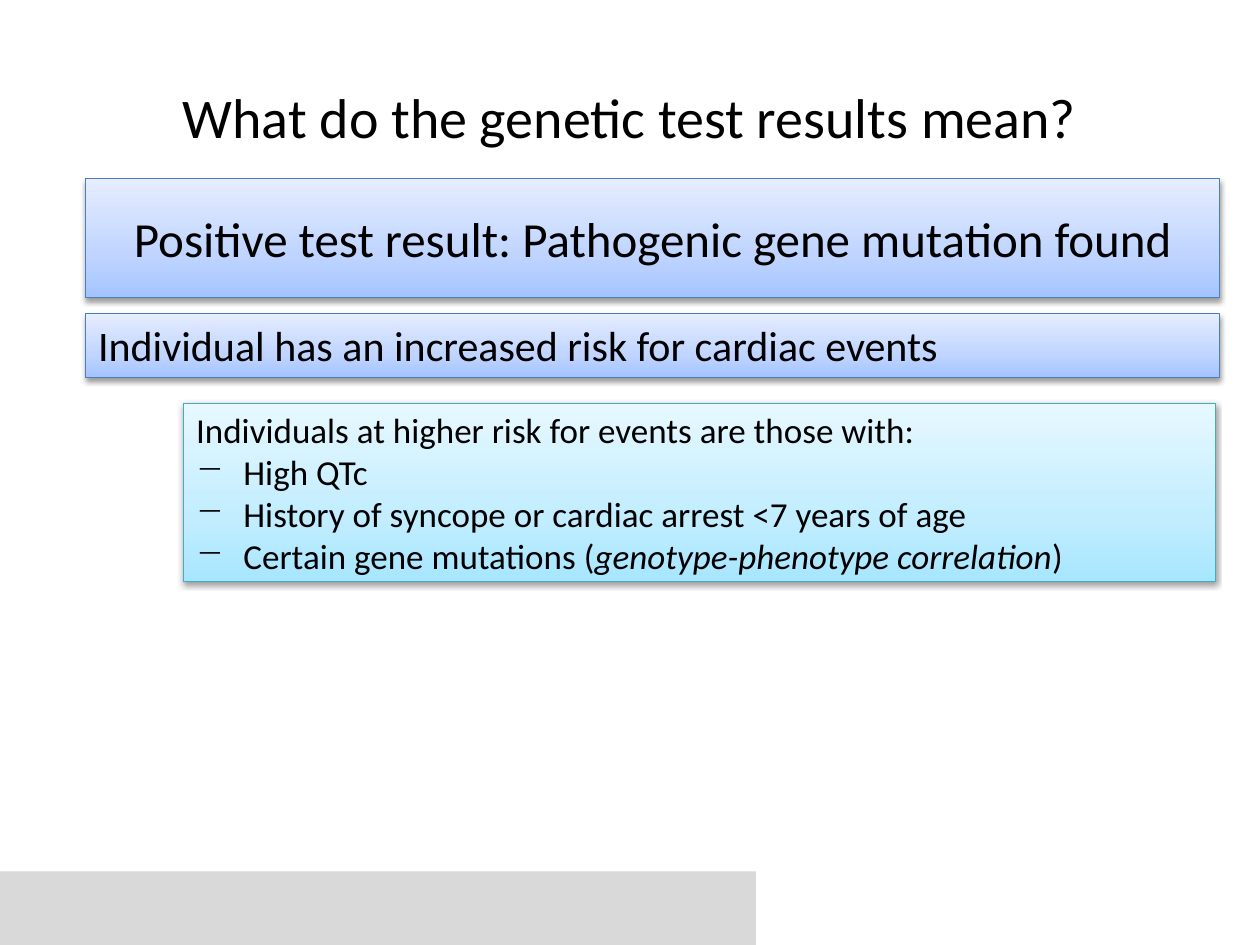
from copy import deepcopy

from lxml import etree
from pptx import Presentation
from pptx.dml.color import RGBColor
from pptx.enum import shapes, text
from pptx.oxml import ns
from pptx.util import Pt

COLORS = {"text": "000000", "footer": "D9D9D9", "shadow": "000000"}
# Gradient stops run from the bottom of a box to its top
BLUE = {"line": "4B7EBC", "stops": [(0, "A4C4FF"), (35, "BFD4FF"), (100, "E6EEFF")]}
CYAN = {"line": "46AAC5", "stops": [(0, "A7E6FF"), (35, "C1EDFF"), (100, "E7F8FF")]}

LEFT, CENTER = text.PP_ALIGN.LEFT, text.PP_ALIGN.CENTER
TOP, MIDDLE = text.MSO_ANCHOR.TOP, text.MSO_ANCHOR.MIDDLE
INDENT = 27

RISK_FACTORS = [
    [("High QTc", False)],
    [("History of syncope or cardiac arrest <7 years of age", False)],
    [("Certain gene mutations (", False),
     ("genotype-phenotype correlation", True), (")", False)],
]


def add_child(parent, tag, **attributes):
    return etree.SubElement(parent, ns.qn(tag), attributes)


def write_paragraph(paragraph, runs, size, align=LEFT, bullet=None):
    paragraph.alignment = align
    if bullet:
        properties = paragraph._p.get_or_add_pPr()
        properties.set("marL", str(Pt(INDENT)))
        properties.set("indent", str(Pt(-INDENT)))
        add_child(properties, "a:buChar", char=bullet)
    for wording, italic in runs:
        run = paragraph.add_run()
        run.text = wording
        formats = {"name": "Calibri", "size": Pt(size), "italic": italic}
        for name, value in formats.items():
            setattr(run.font, name, value)
        run.font.color.rgb = RGBColor.from_string(COLORS["text"])


def write_line(shape, wording, size, align=LEFT, anchor=MIDDLE):
    frame = shape.text_frame
    frame.word_wrap = True
    frame.vertical_anchor = anchor
    write_paragraph(frame.paragraphs[0], [(wording, False)], size, align)
    return frame


def add_rectangle(slide, box):
    shape = slide.shapes.add_shape(shapes.MSO_SHAPE.RECTANGLE, *map(Pt, box))
    shape.shadow.inherit = False
    return shape


def add_footer_band(slide, box):
    shape = add_rectangle(slide, box)
    shape.fill.solid()
    shape.fill.fore_color.rgb = RGBColor.from_string(COLORS["footer"])
    shape.line.fill.background()


def add_shadow(shape):
    effects = shape._element.spPr.find(ns.qn("a:effectLst"))
    shadow = add_child(effects, "a:outerShdw", blurRad=str(Pt(3.1)),
                       dist=str(Pt(1.6)), dir="5400000", rotWithShape="0")
    color = add_child(shadow, "a:srgbClr", val=COLORS["shadow"])
    add_child(color, "a:alpha", val="38000")


def add_gradient_box(slide, box, style):
    shape = add_rectangle(slide, box)
    shape.fill.gradient()
    shape.fill.gradient_angle = 90
    # The default gradient has two stops; a third is needed
    stop_list = shape._element.spPr.find(".//" + ns.qn("a:gsLst"))
    stop_list.append(deepcopy(stop_list[-1]))
    for stop, (position, color) in zip(shape.fill.gradient_stops, style["stops"]):
        stop.position = position / 100
        stop.color.rgb = RGBColor.from_string(color)
    shape.line.color.rgb = RGBColor.from_string(style["line"])
    shape.line.width = Pt(0.75)
    add_shadow(shape)
    return shape


def main():
    presentation = Presentation()
    presentation.slide_width, presentation.slide_height = Pt(720), Pt(540)
    slide = presentation.slides.add_slide(presentation.slide_layouts[6])

    # Footer band and title
    add_footer_band(slide, (0, 498, 432, 42))
    title = slide.shapes.add_textbox(*map(Pt, (36, 21.6, 648, 90)))
    write_line(title, "What do the genetic test results mean?", 32, CENTER)

    # Test result and what it means
    result = add_gradient_box(slide, (49, 102, 648, 68), BLUE)
    write_line(result, "Positive test result: Pathogenic gene mutation found", 28, CENTER)
    meaning = add_gradient_box(slide, (49, 179.3, 648, 36.4), BLUE)
    write_line(meaning, "Individual has an increased risk for cardiac events", 24, anchor=TOP)

    # Risk factors
    risks = add_gradient_box(slide, (105, 230.4, 589.7, 102), CYAN)
    frame = write_line(risks, "Individuals at higher risk for events are those with:", 20)
    for runs in RISK_FACTORS:
        write_paragraph(frame.add_paragraph(), runs, 20, bullet="─")

    presentation.save("out.pptx")


if __name__ == "__main__":
    main()
